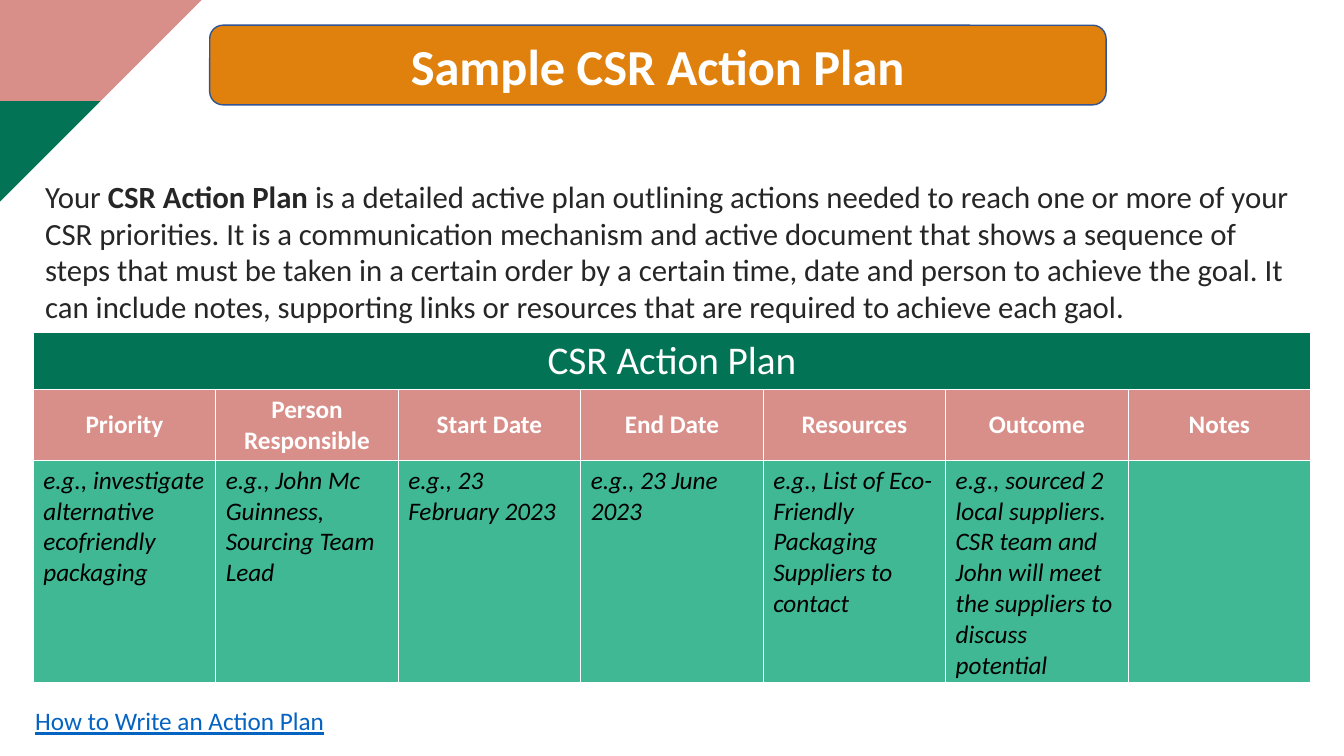
from dataclasses import dataclass

from lxml.etree import SubElement
from pptx import Presentation
from pptx.dml.color import RGBColor
from pptx.enum.shapes import MSO_SHAPE
from pptx.enum.text import MSO_ANCHOR, PP_ALIGN
from pptx.oxml.ns import qn
from pptx.util import Inches, Pt

FONT = "Calibri"
WHITE = "FFFFFF"
GREEN = "027354"
PINK = "D98F89"
MINT = "40B894"
ORANGE = "E0810E"
INK = "262626"
LINK = "0563C1"


@dataclass(frozen=True)
class Corner:
    color: str
    points: tuple[tuple[float, float], ...]


@dataclass(frozen=True)
class Box:
    left: float
    top: float
    width: float
    height: float

    def lengths(self) -> tuple:
        return tuple(Inches(v) for v in (self.left, self.top, self.width, self.height))


@dataclass(frozen=True)
class Column:
    heading: str
    example: str = ""


@dataclass(frozen=True)
class Style:
    size: float
    color: str
    bold: bool = False
    italic: bool = False
    underline: bool = False


CORNERS = (
    Corner(GREEN, ((0, 0.83), (0.52, 1.38), (0, 1.94))),
    Corner(PINK, ((0, 0), (1.83, 0), (0.52, 1.38), (0, 0.83))),
)
BANNER = Box(2.08, 0.25, 8.89, 0.79)
INTRO = Box(0.35, 1.71, 12.64, 4.37)
REFERENCE = Box(0.25, 6.95, 3.82, 0.4)
PLAN = Box(0.33, 3.3, 12.67, 3.46)
ROW_HEIGHTS = (0.56, 0.7, 2.2)
INTRO_RUNS = (
    ("Your ", False),
    ("CSR Action Plan ", True),
    ("is a detailed active plan outlining actions needed to reach one or more of "
     "your CSR priorities. It is a communication mechanism and active document that "
     "shows a sequence of steps that must be taken in a certain order by a certain "
     "time, date and person to achieve the goal. It can include notes, supporting "
     "links or resources that are required to achieve each gaol.", False),
)
COLUMNS = (
    Column("Priority", "e.g., investigate alternative ecofriendly packaging"),
    Column("Person Responsible", "e.g., John Mc Guinness, Sourcing Team Lead"),
    Column("Start Date", "e.g., 23 February 2023"),
    Column("End Date", "e.g., 23 June 2023"),
    Column("Resources", "e.g., List of Eco-Friendly Packaging Suppliers to contact"),
    Column("Outcome", "e.g., sourced 2 local suppliers. CSR team and John will meet "
                      "the suppliers to discuss potential"),
    Column("Notes"),
)


def rgb(color: str) -> RGBColor:
    return RGBColor.from_string(color)


def fill_solid(item, color: str) -> None:
    item.fill.solid()
    item.fill.fore_color.rgb = rgb(color)


def format_run(r, style: Style) -> None:
    r.font.name = FONT
    r.font.size = Pt(style.size)
    r.font.bold = style.bold
    r.font.italic = style.italic
    r.font.underline = style.underline
    r.font.color.rgb = rgb(style.color)


def set_text(tf, text: str, style: Style, align=PP_ALIGN.LEFT) -> None:
    tf.text = text
    p = tf.paragraphs[0]
    p.alignment = align
    for r in p.runs:
        format_run(r, style)


def add_corner(slide, corner: Corner) -> None:
    start, *rest = corner.points
    builder = slide.shapes.build_freeform(*start, scale=Inches(1))
    builder.add_line_segments(rest, close=True)
    sp = builder.convert_to_shape()
    sp.shadow.inherit = False
    fill_solid(sp, corner.color)
    sp.line.fill.background()


def add_title(slide, text: str) -> None:
    banner = slide.shapes.add_shape(MSO_SHAPE.ROUNDED_RECTANGLE, *BANNER.lengths())
    banner.shadow.inherit = False
    fill_solid(banner, ORANGE)
    banner.line.color.rgb = rgb("325491")
    banner.line.width = Pt(1)
    title = slide.shapes.title
    title.left, title.top, title.width, title.height = BANNER.lengths()
    title.text_frame.vertical_anchor = MSO_ANCHOR.MIDDLE
    set_text(title.text_frame, text, Style(36, WHITE, bold=True), PP_ALIGN.CENTER)
    banner._element.addnext(title._element)


def add_text_box(slide, box: Box):
    tf = slide.shapes.add_textbox(*box.lengths()).text_frame
    tf.word_wrap = True
    return tf


def add_intro(slide) -> None:
    p = add_text_box(slide, INTRO).paragraphs[0]
    for text, bold in INTRO_RUNS:
        r = p.add_run()
        r.text = text
        format_run(r, Style(22, INK, bold=bold))


def format_cell(cell, fill: str) -> None:
    tc_pr = cell._tc.get_or_add_tcPr()
    for side in ("a:lnL", "a:lnR", "a:lnT", "a:lnB"):
        ln = SubElement(tc_pr, qn(side), w=str(Pt(1)))
        SubElement(SubElement(ln, qn("a:solidFill")), qn("a:srgbClr"), val=WHITE)
    fill_solid(cell, fill)


def add_plan(slide) -> None:
    table = slide.shapes.add_table(len(ROW_HEIGHTS), len(COLUMNS), *PLAN.lengths()).table
    for row, height, fill in zip(table.rows, ROW_HEIGHTS, (GREEN, PINK, MINT)):
        row.height = Inches(height)
        for cell in row.cells:
            format_cell(cell, fill)
    caption = table.cell(0, 0)
    caption.merge(table.cell(0, len(COLUMNS) - 1))
    set_text(caption.text_frame, "CSR Action Plan", Style(28, WHITE), PP_ALIGN.CENTER)
    for i, column in enumerate(COLUMNS):
        table.columns[i].width = Inches(PLAN.width / len(COLUMNS))
        heading = table.cell(1, i)
        heading.vertical_anchor = MSO_ANCHOR.MIDDLE
        set_text(heading.text_frame, column.heading, Style(18, WHITE, bold=True),
                 PP_ALIGN.CENTER)
        set_text(table.cell(2, i).text_frame, column.example,
                 Style(18, "000000", italic=True))


def main() -> None:
    prs = Presentation()
    prs.slide_width, prs.slide_height = Inches(13.33), Inches(7.5)
    slide = prs.slides.add_slide(prs.slide_layouts.get_by_name("Title Only"))
    for corner in CORNERS:
        add_corner(slide, corner)
    add_title(slide, "Sample CSR Action Plan")
    add_intro(slide)
    set_text(add_text_box(slide, REFERENCE), "How to Write an Action Plan",
             Style(18, LINK, underline=True))
    add_plan(slide)
    prs.save("out.pptx")


if __name__ == "__main__":
    main()
